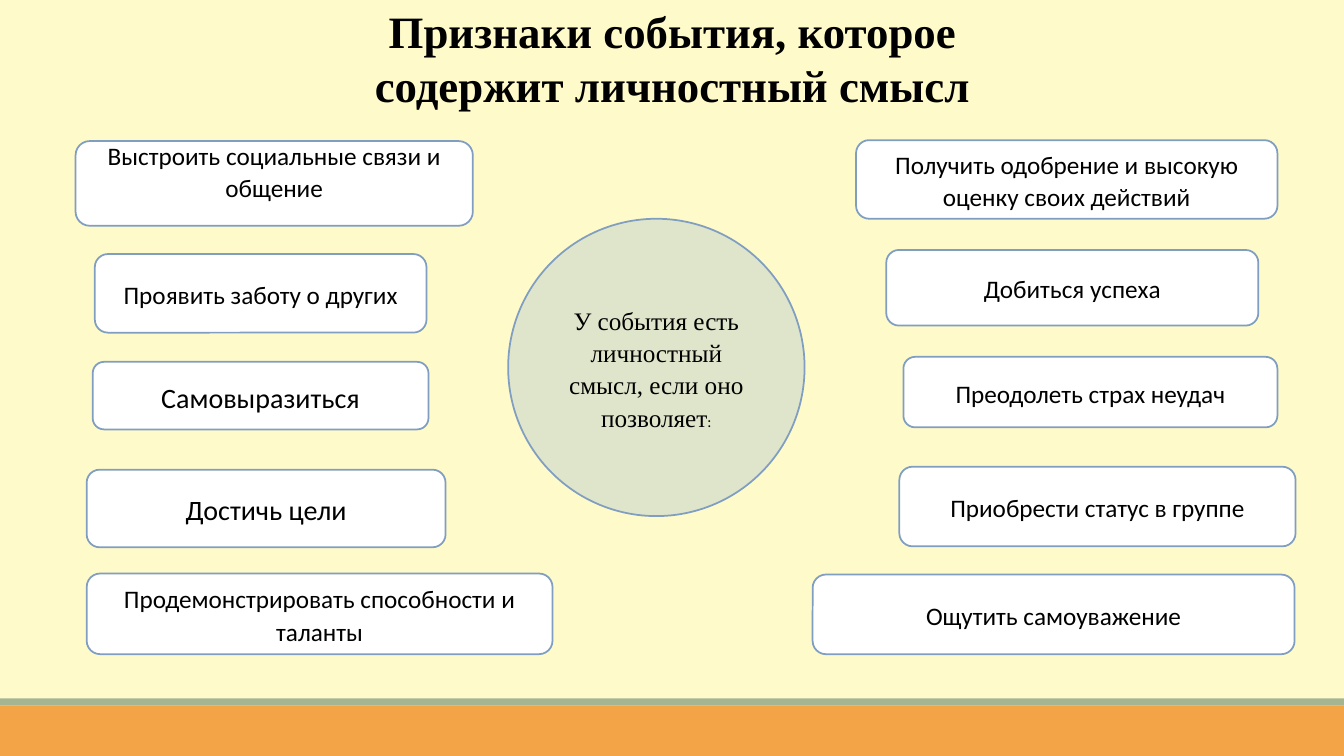
from pptx import Presentation
from pptx.dml.color import RGBColor
from pptx.enum.shapes import MSO_SHAPE
from pptx.enum.text import MSO_ANCHOR, MSO_AUTO_SIZE, PP_ALIGN
from pptx.util import Inches, Pt

C = {"bg": "FEFAC9", "bar": "F3A447", "stripe": "A5B592", "circle": "DFE5CA",
     "box": "FFFFFF", "line": "809EC2", "text": "000000"}
W, H = 13.33, 7.5
BAR_H, STRIPE_H = 0.5, 0.07

prs = Presentation()
prs.slide_width, prs.slide_height = Inches(W), Inches(H)
s = prs.slides.add_slide(prs.slide_layouts[5])
s.background.fill.solid()
s.background.fill.fore_color.rgb = RGBColor.from_string(C["bg"])


def add_shape(kind, x, y, w, h, fill, line=None):
    sp = s.shapes.add_shape(kind, Inches(x), Inches(y), Inches(w), Inches(h))
    sp.shadow.inherit = False
    sp.fill.solid()
    sp.fill.fore_color.rgb = RGBColor.from_string(C[fill])
    if line:
        sp.line.color.rgb = RGBColor.from_string(C[line])
        sp.line.width = Pt(1.25)
    else:
        sp.line.fill.background()
    return sp


def write(sp, text, size, font, bold=False, spacing=1.07, after=8):
    """Put one centred paragraph into a shape and return it."""
    tf = sp.text_frame
    tf.word_wrap = True
    tf.auto_size = MSO_AUTO_SIZE.NONE
    tf.vertical_anchor = MSO_ANCHOR.MIDDLE
    p = tf.paragraphs[0]
    p.text = text
    p.alignment = PP_ALIGN.CENTER
    p.line_spacing, p.space_after = spacing, Pt(after)
    p.font.size, p.font.name, p.font.bold = Pt(size), font, bold
    p.font.color.rgb = RGBColor.from_string(C["text"])
    return p


# Footer bands
add_shape(MSO_SHAPE.RECTANGLE, 0, H - BAR_H, W, BAR_H, "bar")
add_shape(MSO_SHAPE.RECTANGLE, 0, H - BAR_H - STRIPE_H, W, STRIPE_H, "stripe")

# Title
title = s.shapes.title
title.left, title.top, title.width, title.height = map(Inches, (3.06, 0, 7.22, 1.14))
write(title, "Признаки события, которое содержит личностный смысл", 32,
      "Times New Roman", bold=True, spacing=1.0, after=0)

# Central circle
circle = add_shape(MSO_SHAPE.OVAL, 5.04, 2.17, 2.94, 2.95, "circle", "line")
p = write(circle, "У события есть личностный смысл, если оно позволяет", 18,
          "Times New Roman")
r = p.add_run()
r.text = ":"
r.font.size, r.font.name = Pt(11), "Calibri"

# Signs on both sides: left, top, width, height, text size, text
signs = [
    (0.75, 1.40, 3.94, 0.84, 18, "Выстроить социальные связи и общение"),
    (0.94, 2.52, 3.29, 0.78, 18, "Проявить заботу о других"),
    (0.92, 3.59, 3.33, 0.67, 20, "Самовыразиться"),
    (0.86, 4.66, 3.56, 0.77, 20, "Достичь цели"),
    (0.86, 5.69, 4.62, 0.80, 18, "Продемонстрировать способности и таланты"),
    (8.49, 1.39, 4.18, 0.78, 18, "Получить одобрение и высокую оценку своих действий"),
    (8.79, 2.48, 3.69, 0.75, 18, "Добиться успеха"),
    (8.96, 3.54, 3.71, 0.70, 18, "Преодолеть страх неудач"),
    (8.92, 4.63, 3.93, 0.79, 18, "Приобрести статус в группе"),
    (8.06, 5.70, 4.78, 0.79, 18, "Ощутить самоуважение"),
]
boxes = []
for x, y, w, h, size, text in signs:
    box = add_shape(MSO_SHAPE.ROUNDED_RECTANGLE, x, y, w, h, "box", "line")
    write(box, text, size, "Calibri")
    boxes.append(box)

# The first sign sits at the top of its box
boxes[0].text_frame.vertical_anchor = MSO_ANCHOR.TOP
boxes[0].text_frame.margin_top = Inches(-0.07)

prs.save("out.pptx")
